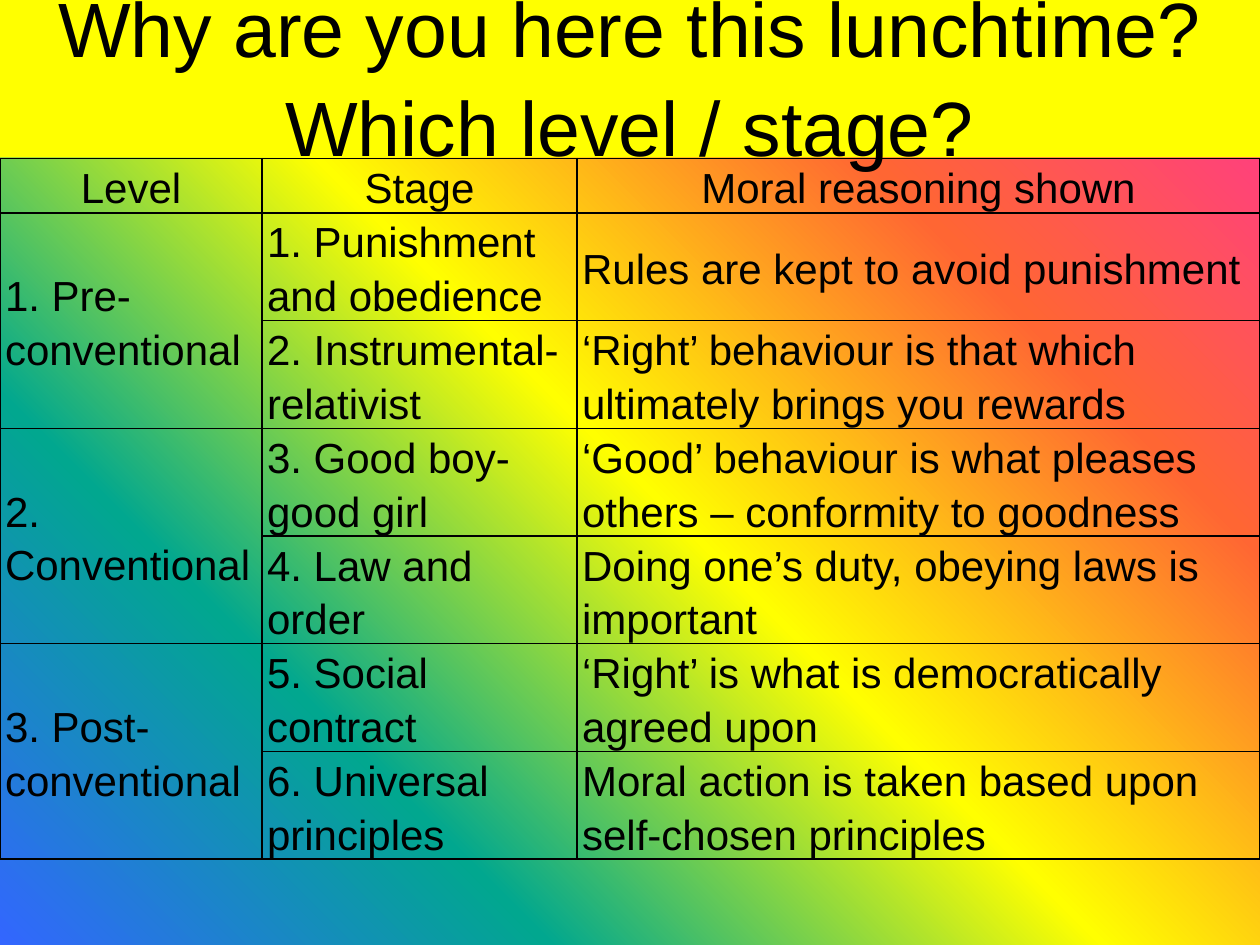
from lxml import etree
from pptx import Presentation
from pptx import util as u
from pptx.dml.color import RGBColor
from pptx.enum import shapes, text
from pptx.oxml import ns

# Content
TITLE = "Why are you here this lunchtime? Which level / stage?"
HEADERS = ["Level", "Stage", "Moral reasoning shown"]
LEVELS = [
    ("1. Pre-conventional", [
        ("1. Punishment and obedience", "Rules are kept to avoid punishment"),
        ("2. Instrumental-relativist",
         "‘Right’ behaviour is that which ultimately brings you rewards"),
    ]),
    ("2. Conventional", [
        ("3. Good boy-good girl",
         "‘Good’ behaviour is what pleases others – conformity to goodness"),
        ("4. Law and order", "Doing one’s duty, obeying laws is important"),
    ]),
    ("3. Post-conventional", [
        ("5. Social contract", "‘Right’ is what is democratically agreed upon"),
        ("6. Universal principles",
         "Moral action is taken based upon self-chosen principles"),
    ]),
]


class Theme:
    font = "Arial"
    ink = "000000"
    banner = "FFFF00"
    rainbow = ["FF3399", "FF6633", "FFFF00", "01A78F", "3366FF"]
    title_size = 44
    table_size = 24
    border = 1


COLUMNS = [2.08, 2.5, 5.42]
HEADER_HEIGHT, STAGE_HEIGHT = 0.43, 0.85
TABLE_TOP = 1.26


def write(frame, words, size, align=text.PP_ALIGN.LEFT, spacing=1.0):
    para = frame.paragraphs[0]
    para.alignment = align
    para.line_spacing = spacing
    span = para.add_run()
    span.text = words
    span.font.name = Theme.font
    span.font.size = u.Pt(size)
    span.font.color.rgb = RGBColor.from_string(Theme.ink)


def add_color(parent, value):
    fill = etree.SubElement(parent, ns.qn("a:solidFill"))
    etree.SubElement(fill, ns.qn("a:srgbClr"), val=value)


def paint_background(page):
    fill = page.background.fill
    fill.gradient()
    fill.gradient_angle = 225
    stops = page._element.find(".//" + ns.qn("a:gsLst"))
    for stop in list(stops):
        stops.remove(stop)
    step = 100000 // (len(Theme.rainbow) - 1)
    for index, color in enumerate(Theme.rainbow):
        stop = etree.SubElement(stops, ns.qn("a:gs"), pos=str(index * step))
        etree.SubElement(stop, ns.qn("a:srgbClr"), val=color)


def fill_cell(cell, words, header=False):
    cell.margin_left = cell.margin_right = u.Inches(0.04)
    cell.margin_top = cell.margin_bottom = 0
    cell.vertical_anchor = text.MSO_ANCHOR.TOP if header else text.MSO_ANCHOR.MIDDLE
    align = text.PP_ALIGN.CENTER if header else text.PP_ALIGN.LEFT
    write(cell.text_frame, words, Theme.table_size, align=align, spacing=1.15)


def outline_cell(cell):
    properties = cell._tc.get_or_add_tcPr()
    for side in ("a:lnL", "a:lnR", "a:lnT", "a:lnB"):
        line = etree.SubElement(properties, ns.qn(side), w=str(u.Pt(Theme.border)))
        add_color(line, Theme.ink)
    cell.fill.background()


def add_title(page):
    box = page.shapes.add_shape(shapes.MSO_SHAPE.RECTANGLE, 0, u.Inches(-0.1),
                                u.Inches(10), u.Inches(1.35))
    box.shadow.inherit = False
    box.fill.solid()
    box.fill.fore_color.rgb = RGBColor.from_string(Theme.banner)
    box.line.fill.background()
    box.text_frame.word_wrap = True
    box.text_frame.vertical_anchor = text.MSO_ANCHOR.MIDDLE
    write(box.text_frame, TITLE, Theme.title_size,
          align=text.PP_ALIGN.CENTER, spacing=1.08)


def add_stage_table(page):
    heights = [HEADER_HEIGHT] + [STAGE_HEIGHT for _, stages in LEVELS for _ in stages]
    table = page.shapes.add_table(
        len(heights), len(COLUMNS), 0, u.Inches(TABLE_TOP),
        u.Inches(sum(COLUMNS)), u.Inches(sum(heights))).table
    table.first_row = table.horz_banding = False
    for column, width in zip(table.columns, COLUMNS):
        column.width = u.Inches(width)
    for row, height in zip(table.rows, heights):
        row.height = u.Inches(height)

    # Header row, then one merged level cell beside its stages
    for column, words in enumerate(HEADERS):
        fill_cell(table.cell(0, column), words, header=True)
    top = 1
    for level, stages in LEVELS:
        table.cell(top, 0).merge(table.cell(top + len(stages) - 1, 0))
        fill_cell(table.cell(top, 0), level)
        for row, (stage, reasoning) in enumerate(stages, top):
            fill_cell(table.cell(row, 1), stage)
            fill_cell(table.cell(row, 2), reasoning)
        top += len(stages)
    for cell in table.iter_cells():
        outline_cell(cell)


def main():
    deck = Presentation()
    deck.slide_width, deck.slide_height = u.Inches(10), u.Inches(7.5)
    page = deck.slides.add_slide(deck.slide_layouts[6])
    paint_background(page)
    add_title(page)
    add_stage_table(page)
    deck.save("out.pptx")


if __name__ == "__main__":
    main()
